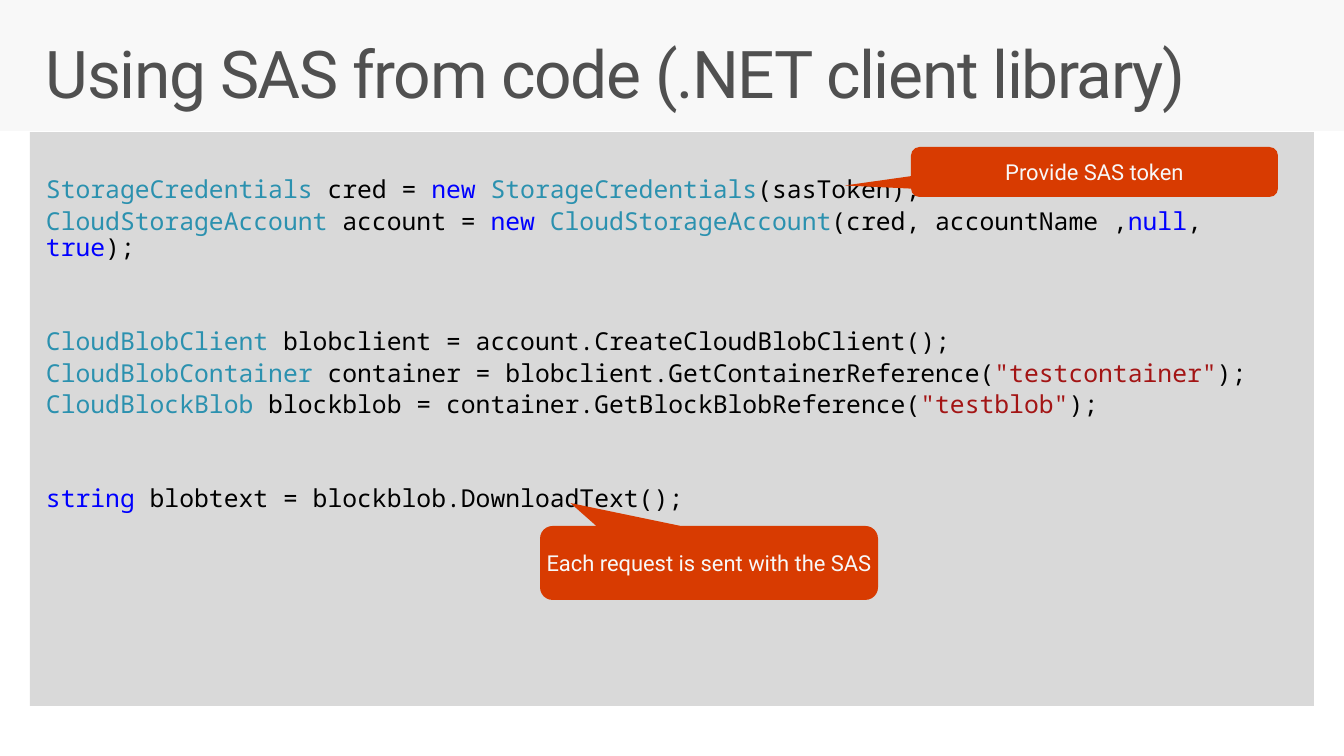
from dataclasses import dataclass
from pptx import Presentation
from pptx.dml.color import RGBColor
from pptx.enum.shapes import MSO_SHAPE as Shape
from pptx.enum.text import MSO_ANCHOR as Anchor, PP_ALIGN as Align

TITLE = "Using SAS from code (.NET client library)"

STATEMENT_GROUPS = [
    [
        [("StorageCredentials", "type"), (" cred = ", "plain"), ("new ", "keyword"),
         ("StorageCredentials", "type"), ("(sasToken);", "plain")],
        [("CloudStorageAccount", "type"), (" account = ", "plain"), ("new ", "keyword"),
         ("CloudStorageAccount", "type"), ("(cred, accountName ,", "plain"),
         ("null", "keyword"), (", ", "plain"), ("true", "keyword"), (");", "plain")],
    ],
    [
        [("CloudBlobClient ", "type"),
         ("blobclient = account.CreateCloudBlobClient();", "plain")],
        [("CloudBlobContainer", "type"),
         (" container = blobclient.GetContainerReference(", "plain"),
         ('"testcontainer"', "string"), (");", "plain")],
        [("CloudBlockBlob ", "type"),
         ("blockblob = container.GetBlockBlobReference(", "plain"),
         ('"testblob"', "string"), (");", "plain")],
    ],
    [
        [("string ", "keyword"), ("blobtext = blockblob.DownloadText();", "plain")],
    ],
]

CALLOUTS = [
    ("Provide SAS token", (911, 147, 367, 50), (-0.68, 0.27, 0.17)),
    ("Each request is sent with the SAS", (540, 526, 338, 74), (-0.41, -0.81, 0.17)),
]


@dataclass(frozen=True)
class Theme:
    """Colours, fonts and type sizes of the slide."""
    band: str = "F8F8F8"
    page: str = "FFFFFF"
    panel: str = "D9D9D9"
    accent: str = "D83B01"
    heading: str = "505050"
    type: str = "2B91AF"
    plain: str = "000000"
    keyword: str = "0000FF"
    string: str = "A31515"
    text_font: str = "Roboto"
    code_font: str = "Noto Sans Mono"
    title_size: int = 48
    code_size: int = 18
    callout_size: int = 16


THEME = Theme()
EMU_PER_PX = 9255
SLIDE_WIDTH, SLIDE_HEIGHT = 1344, 756
MARGIN = 30
PANEL_WIDTH = SLIDE_WIDTH - 2 * MARGIN
BAND_HEIGHT = 131
LINE_GAP, GROUP_GAP = 5, 67


def px(length):
    """Turn pixels into EMU."""
    return round(length * EMU_PER_PX)


def add_box(slide, kind, box, fill):
    """Add a flat filled shape without outline."""
    shape = slide.shapes.add_shape(kind, *map(px, box))
    shape.shadow.inherit = False
    shape.fill.solid()
    shape.fill.fore_color.rgb = RGBColor.from_string(fill)
    shape.line.fill.background()
    return shape


def write(shape, lines, *, font, size, insets, align=Align.LEFT, anchor=Anchor.TOP,
          line_spacing=1.0, gaps=(0,), tracking=None):
    """Fill a shape with lines of (text, colour) runs."""
    frame = shape.text_frame
    frame.word_wrap = True
    frame.vertical_anchor = anchor
    frame.margin_left = frame.margin_right = px(insets[0])
    frame.margin_top, frame.margin_bottom = px(insets[1]), px(insets[2])
    for index, (line, gap) in enumerate(zip(lines, gaps)):
        paragraph = frame.add_paragraph() if index else frame.paragraphs[0]
        paragraph.alignment = align
        paragraph.line_spacing = line_spacing
        paragraph.space_before = px(gap)
        for text, colour in line:
            run = paragraph.add_run()
            run.text = text
            run.font.name = font
            run.font.size = size * 12700
            run.font.color.rgb = RGBColor.from_string(colour)
            if tracking is not None:
                run.font._element.set("spc", str(tracking))


def main():
    """Build the slide and save it."""
    deck = Presentation()
    deck.slide_width, deck.slide_height = px(SLIDE_WIDTH), px(SLIDE_HEIGHT)
    slide = deck.slides.add_slide(deck.slide_layouts[6])
    slide.background.fill.solid()
    slide.background.fill.fore_color.rgb = RGBColor.from_string(THEME.band)

    add_box(slide, Shape.RECTANGLE,
            (0, BAND_HEIGHT, SLIDE_WIDTH, SLIDE_HEIGHT - BAND_HEIGHT), THEME.page)

    heading = slide.shapes.add_textbox(*map(px, (MARGIN, 32, PANEL_WIDTH, 99)))
    write(heading, [[(TITLE, THEME.heading)]], font=THEME.text_font,
          size=THEME.title_size, insets=(16, 10, 10), line_spacing=0.9, tracking=-100)

    code_panel = add_box(slide, Shape.RECTANGLE, (MARGIN, 132, PANEL_WIDTH, 574), THEME.panel)
    statements, gaps = [], []
    for group in STATEMENT_GROUPS:
        for position, statement in enumerate(group):
            gaps.append(LINE_GAP if position else GROUP_GAP if statements else 0)
            statements.append([(text, getattr(THEME, role)) for text, role in statement])
    write(code_panel, statements, font=THEME.code_font, size=THEME.code_size,
          insets=(16, 45, 10), line_spacing=0.9, gaps=gaps)

    for message, box, pointer in CALLOUTS:
        callout = add_box(slide, Shape.ROUNDED_RECTANGULAR_CALLOUT, box, THEME.accent)
        for index, value in enumerate(pointer):
            callout.adjustments[index] = value
        write(callout, [[(message, THEME.band)]], font=THEME.text_font,
              size=THEME.callout_size, insets=(0, 5, 5),
              align=Align.CENTER, anchor=Anchor.MIDDLE)

    deck.save("out.pptx")


if __name__ == "__main__":
    main()
